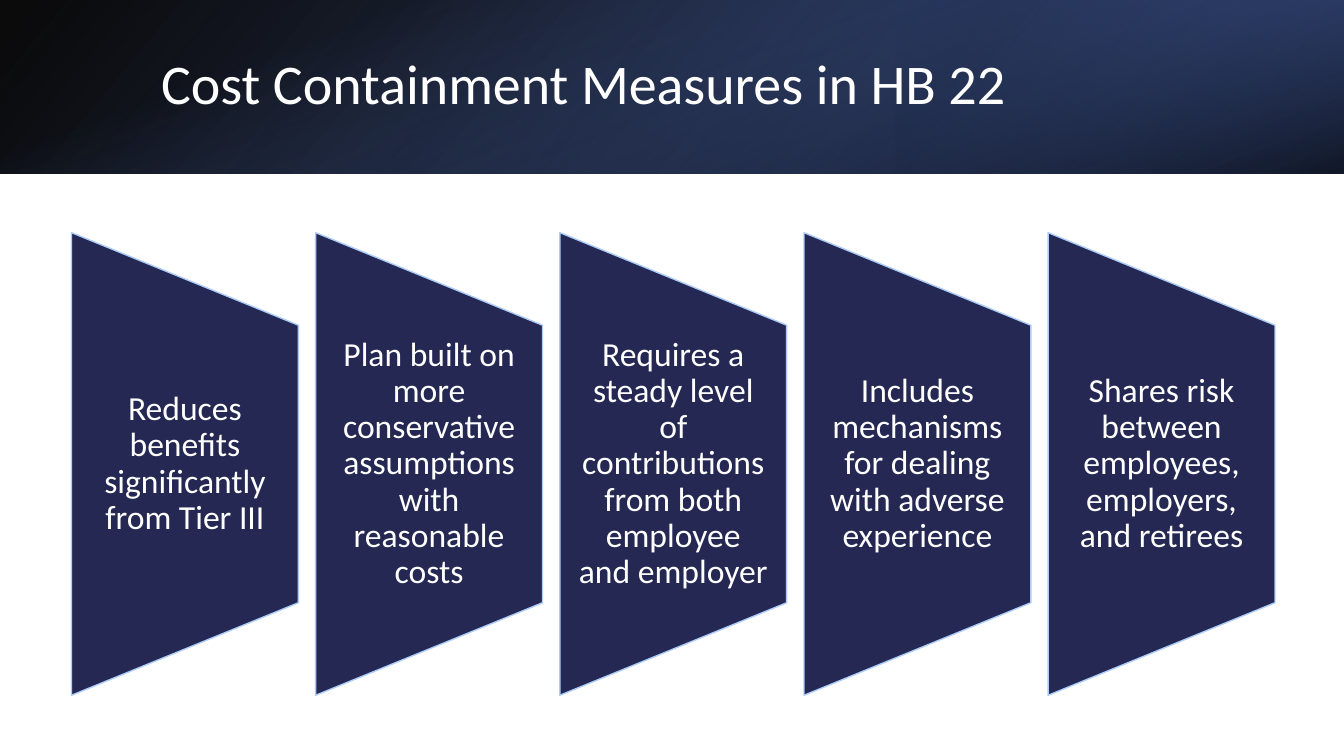
import pptx
import pptx.dml.color
import pptx.enum.shapes
import pptx.enum.text
import pptx.oxml
import pptx.oxml.ns
import pptx.util

Pt = pptx.util.Pt
SHAPES = pptx.enum.shapes.MSO_SHAPE
ALIGN = pptx.enum.text.PP_ALIGN

COLORS = {
    "white": "FFFFFF",
    "black": "000000",
    "blue": "4A66AC",
    "mid_blue": "384C81",
    "deep_blue": "253356",
    "navy": "242852",
    "outline": "ACCBF9",
}
FONT = "Calibri"
PAGE_WIDTH, PAGE_HEIGHT = 960, 540
BAND_HEIGHT = 124

# Measures panels
MEASURES = [
    "Reduces benefits significantly from Tier III",
    "Plan built on more conservative assumptions with reasonable costs",
    "Requires a steady level of contributions from both employee and employer",
    "Includes mechanisms for dealing with adverse experience",
    "Shares risk between employees, employers, and retirees",
]
PANEL_LEFT, PANEL_STEP = 51.1, 174.4
PANEL_WIDTH, PANEL_HEIGHT = 162, 330.4
PANEL_CENTER = 331.4
LABEL_HEIGHT = 198


def color(name):
    return pptx.dml.color.RGBColor.from_string(COLORS[name])


def add_turned_shape(page, kind, left, top, width, height, rotation):
    """Add a shape that covers the given area once it is rotated."""
    if rotation % 180:
        left += (width - height) / 2
        top += (height - width) / 2
        width, height = height, width
    shape = page.shapes.add_shape(kind, Pt(left), Pt(top), Pt(width), Pt(height))
    shape.rotation = rotation
    shape.shadow.inherit = False
    return shape


def add_gradient(page, left, width, rotation, flipped, angle, stops):
    """Add a band layer; each stop is position, colour name and opacity in percent."""
    layer = add_turned_shape(page, SHAPES.RECTANGLE, left, 0, width, BAND_HEIGHT, rotation)
    layer.line.fill.background()
    layer.fill.gradient()
    layer.fill.gradient_angle = 360 - angle
    for stop, (position, name, opacity) in zip(layer.fill.gradient_stops, stops):
        stop.position = position / 100
        stop.color.rgb = color(name)
    properties = layer._element.spPr
    tag = pptx.oxml.ns.qn("a:srgbClr")
    for element, (position, name, opacity) in zip(properties.iter(tag), stops):
        alpha = pptx.oxml.parse_xml(
            f'<a:alpha {pptx.oxml.ns.nsdecls("a")} val="{opacity * 1000}"/>')
        element.append(alpha)
    if flipped:
        properties.xfrm.set("flipH", "1")


def add_text(page, text, left, top, width, height, size, align, inset, margin):
    box = page.shapes.add_textbox(Pt(left), Pt(top), Pt(width), Pt(height))
    frame = box.text_frame
    frame.word_wrap = True
    frame.vertical_anchor = pptx.enum.text.MSO_ANCHOR.MIDDLE
    frame.margin_left = frame.margin_right = Pt(inset)
    frame.margin_top = frame.margin_bottom = Pt(margin)
    para = frame.paragraphs[0]
    para.alignment = align
    para.line_spacing = 0.9
    span = para.add_run()
    span.text = text
    span.font.name = FONT
    span.font.size = Pt(size)
    span.font.color.rgb = color("white")


def add_panel(page, left, text):
    panel = add_turned_shape(page, SHAPES.FLOWCHART_MANUAL_OPERATION, left,
                             PANEL_CENTER - PANEL_HEIGHT / 2,
                             PANEL_WIDTH, PANEL_HEIGHT, 270)
    panel.fill.solid()
    panel.fill.fore_color.rgb = color("navy")
    panel.line.color.rgb = color("outline")
    panel.line.width = Pt(1)
    add_text(page, text, left, PANEL_CENTER - LABEL_HEIGHT / 2,
             PANEL_WIDTH, LABEL_HEIGHT, 24, ALIGN.CENTER, 12, 0)


def main():
    deck = pptx.Presentation()
    deck.slide_width, deck.slide_height = Pt(PAGE_WIDTH), Pt(PAGE_HEIGHT)
    page = deck.slides.add_slide(deck.slide_layouts[6])

    # Header band in three gradient layers
    add_gradient(page, 0, PAGE_WIDTH, 0, True, 140,
                 [(0, "black", 96), (100, "mid_blue", 100)])
    add_gradient(page, PAGE_WIDTH * 2 / 3, PAGE_WIDTH / 3, 180, True, 320,
                 [(19, "deep_blue", 68), (100, "blue", 79)])
    add_gradient(page, 0, PAGE_WIDTH, 90, False, 340,
                 [(23, "blue", 0), (99, "black", 74)])

    # Title
    add_text(page, "Cost Containment Measures in HB 22",
             108, 27.4, 790.6, 69, 40, ALIGN.LEFT, 7.2, 3.6)

    # Row of panels
    for index, measure in enumerate(MEASURES):
        add_panel(page, PANEL_LEFT + index * PANEL_STEP, measure)

    deck.save("out.pptx")


if __name__ == "__main__":
    main()
